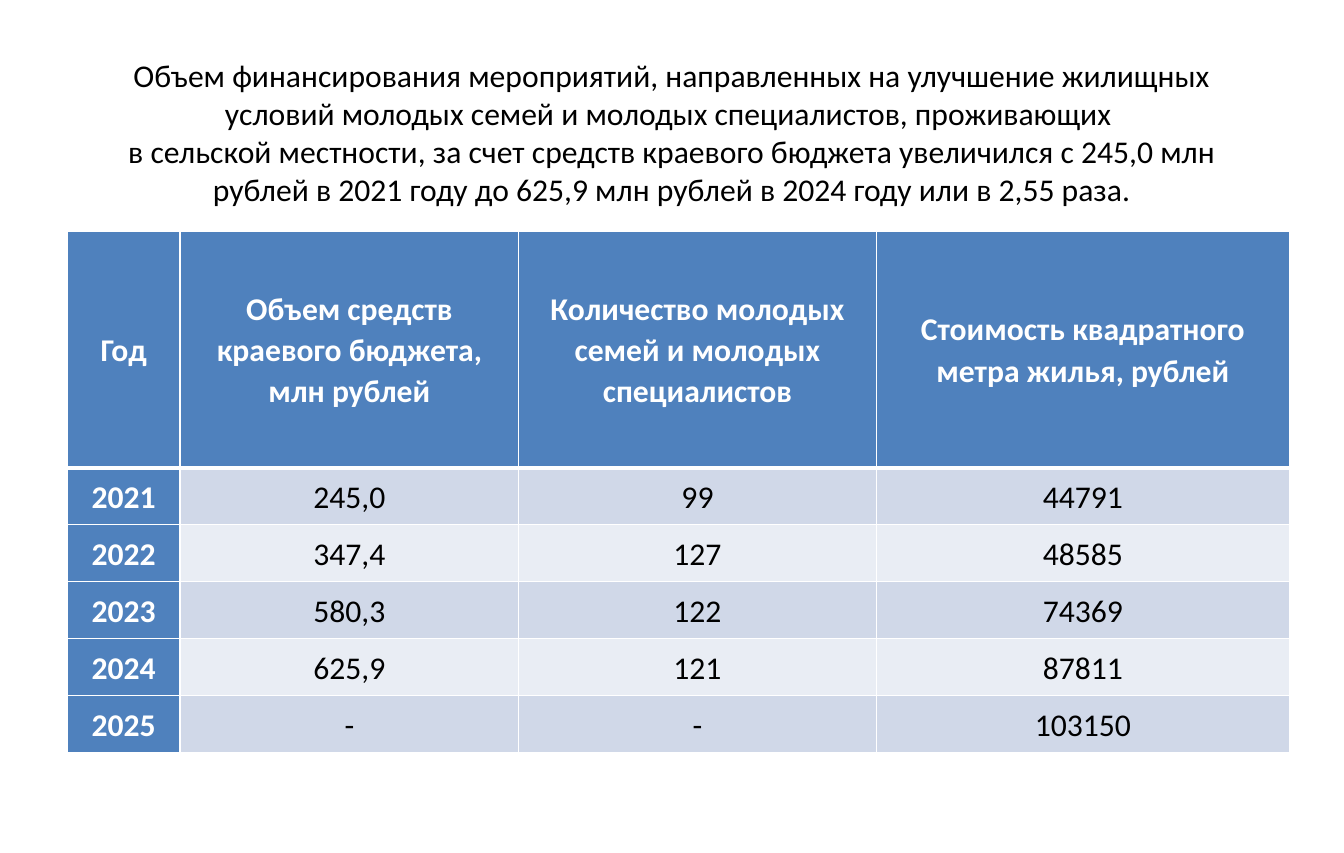
import pptx
import pptx.dml.color
import pptx.enum.text
import pptx.oxml
import pptx.oxml.ns
import pptx.util

RGBColor = pptx.dml.color.RGBColor
WHITE = RGBColor(0xFF, 0xFF, 0xFF)
BLACK = RGBColor(0x00, 0x00, 0x00)
BLUE = RGBColor(0x4F, 0x81, 0xBD)
BANDS = (RGBColor(0xD0, 0xD8, 0xE8), RGBColor(0xE9, 0xED, 0xF4))

WIDTH = pptx.util.Cm(30)
HEIGHT = pptx.util.Cm(19.05)
GRID = 100  # the slide is divided into 100 columns and 100 rows

TITLE = (
    "Объем финансирования мероприятий, направленных на улучшение жилищных "
    "условий молодых семей и молодых специалистов, проживающих ",
    "в сельской местности, за счет средств краевого бюджета увеличился "
    "с 245,0 млн рублей в 2021 году до 625,9 млн рублей в 2024 году "
    "или в 2,55 раза.",
)
HOUSING = (
    ("Год", "Объем средств краевого бюджета, млн рублей",
     "Количество молодых семей и молодых специалистов",
     "Стоимость квадратного метра жилья, рублей"),
    ("2021", "245,0", "99", "44791"),
    ("2022", "347,4", "127", "48585"),
    ("2023", "580,3", "122", "74369"),
    ("2024", "625,9", "121", "87811"),
    ("2025", "-", "-", "103150"),
)


def columns(n):
    return pptx.util.Emu(round(WIDTH * n / GRID))


def rows(n):
    return pptx.util.Emu(round(HEIGHT * n / GRID))


class Page:
    font = "Calibri"
    size = pptx.util.Pt(20)

    def __init__(self, slide):
        self.slide = slide

    def style(self, p, color, bold=False):
        p.alignment = pptx.enum.text.PP_ALIGN.CENTER
        p.font.name, p.font.size = self.font, self.size
        p.font.bold, p.font.color.rgb = bold, color

    def title(self, lines, left, top, width, height):
        box = self.slide.shapes.add_textbox(
            columns(left), rows(top), columns(width), rows(height))
        tf = box.text_frame
        tf.word_wrap = True
        tf.vertical_anchor = pptx.enum.text.MSO_ANCHOR.MIDDLE
        p = tf.paragraphs[0]
        for i, line in enumerate(lines):
            if i:
                p.add_line_break()
            p.add_run().text = line
        self.style(p, BLACK)

    def table(self, data, left, top, widths, heights):
        """Draw a table with a coloured header row and first column."""
        table = self.slide.shapes.add_table(
            len(data), len(widths), columns(left), rows(top),
            columns(sum(widths)), rows(sum(heights))).table
        for column, width in zip(table.columns, widths):
            column.width = columns(width)
        for i, (record, height) in enumerate(zip(data, heights)):
            table.rows[i].height = rows(height)
            for j, text in enumerate(record):
                heading = i == 0 or j == 0
                self.cell(table.cell(i, j), text, heading,
                          BLUE if heading else BANDS[(i - 1) % 2],
                          top=3 if i == 1 else 1, bottom=3 if i == 0 else 1)

    def cell(self, cell, text, heading, fill, top, bottom):
        self.borders(cell, L=1, R=1, T=top, B=bottom)
        cell.fill.solid()
        cell.fill.fore_color.rgb = fill
        cell.vertical_anchor = pptx.enum.text.MSO_ANCHOR.MIDDLE
        cell.margin_left = cell.margin_right = pptx.util.Inches(0.06)
        cell.margin_top = cell.margin_bottom = 0
        cell.text = text
        p = cell.text_frame.paragraphs[0]
        p.line_spacing = 1.07
        self.style(p, WHITE if heading else BLACK, bold=heading)

    def borders(self, cell, **points):
        tc_pr = cell._tc.get_or_add_tcPr()
        for side, width in points.items():
            tc_pr.append(pptx.oxml.parse_xml(
                f'<a:ln{side} {pptx.oxml.ns.nsdecls("a")} '
                f'w="{pptx.util.Pt(width)}"><a:solidFill>'
                f'<a:srgbClr val="{WHITE}"/></a:solidFill></a:ln{side}>'))


def main():
    prs = pptx.Presentation()
    prs.slide_width = WIDTH
    prs.slide_height = HEIGHT
    page = Page(prs.slides.add_slide(prs.slide_layouts[6]))
    page.title(TITLE, left=5, top=4, width=90, height=22.9)
    page.table(HOUSING, left=5, top=27.07,
               widths=(8.4, 25.2, 26.6, 30.75),
               heights=(27.75,) + (6.69,) * 5)
    prs.save("out.pptx")


if __name__ == "__main__":
    main()
